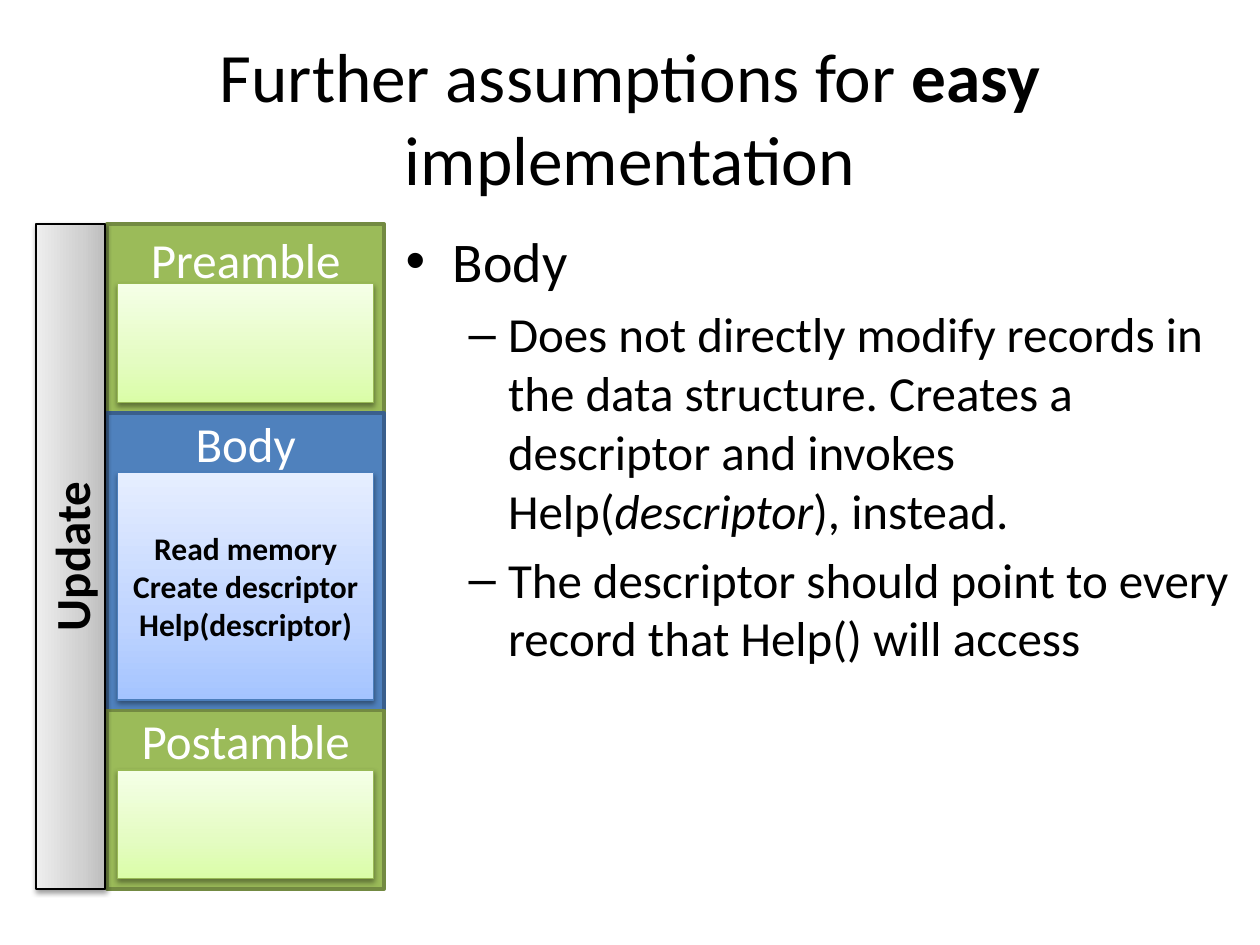
from copy import deepcopy

from lxml.etree import SubElement
from pptx import Presentation
from pptx.dml.color import RGBColor
from pptx.enum.shapes import MSO_SHAPE
from pptx.enum.text import MSO_ANCHOR, MSO_AUTO_SIZE, PP_ALIGN
from pptx.oxml.ns import qn
from pptx.util import Pt

FONT = "Calibri"
TITLE = [("Further assumptions for ", ""), ("easy", "b"), (" implementation", "")]
BULLETS = [
    (0, 32, [("Body", "")]),
    (1, 28, [("Does not directly modify records in the data structure. "
              "Creates a descriptor and invokes Help(", ""),
             ("descriptor", "i"), ("), instead.", "")]),
    (1, 28, [("The descriptor should point to every record that Help() will access", "")]),
]

GREEN = {"fill": "9BBB59", "edge": "738A42", "inner_edge": "98B955",
         "gradient": ("DAFDA7", "E4FCC2", "F5FFE7")}
BLUE = {"fill": "4F81BD", "edge": "3A5F8C", "inner_edge": "4B7EBC",
        "gradient": ("A4C4FF", "BFD4FF", "E6EEFF")}
GREY = ("BDBDBD", "D1D1D1", "EEEEEE")
STOPS = (0, 0.35, 1)

# heading, height, space above the heading, palette, steps inside
PHASES = [
    ("Preamble", 108, 3, GREEN, []),
    ("Body", 170, 0, BLUE, ["Read memory", "Create descriptor", "Help(descriptor)"]),
    ("Postamble", 102, 0, GREEN, []),
]
COLUMN_LEFT, COLUMN_TOP, COLUMN_WIDTH = 61.2, 128, 158.4
HEADING_HEIGHT, MARGIN = 34, 6
BAR_CENTER, BAR_THICKNESS = 40.3, 39.6


def color(hex_code):
    return RGBColor.from_string(hex_code)


def format_font(font, size, hex_code, bold=False, italic=False):
    font.name, font.size = FONT, Pt(size)
    font.bold, font.italic = bold, italic
    font.color.rgb = color(hex_code)


def add_runs(paragraph, pieces, size):
    for words, style in pieces:
        run = paragraph.add_run()
        run.text = words
        format_font(run.font, size, "000000", style == "b", style == "i")


def place(shape, left, top, width, height):
    shape.left, shape.top = Pt(left), Pt(top)
    shape.width, shape.height = Pt(width), Pt(height)


def add_box(shapes, left, top, width, height, edge, edge_width):
    box = shapes.add_shape(MSO_SHAPE.RECTANGLE, Pt(left), Pt(top), Pt(width), Pt(height))
    box.shadow.inherit = False
    box.line.color.rgb = color(edge)
    box.line.width = Pt(edge_width)
    return box


def write_lines(box, lines, size, hex_code, bold):
    frame = box.text_frame
    frame.word_wrap = True
    frame.vertical_anchor = MSO_ANCHOR.MIDDLE
    frame.text = "\n".join(lines)
    for paragraph in frame.paragraphs:
        paragraph.alignment = PP_ALIGN.CENTER
        for run in paragraph.runs:
            format_font(run.font, size, hex_code, bold)


def add_raised_box(shapes, left, top, width, height, edge, gradient):
    """Add a box with a three-stop gradient, darkest at the bottom, and a soft shadow."""
    box = add_box(shapes, left, top, width, height, edge, 0.75)
    box.fill.gradient()
    box.fill.gradient_angle = 90
    properties = box._element.spPr
    stop_list = properties.find(qn("a:gradFill")).find(qn("a:gsLst"))
    stop_list.append(deepcopy(stop_list[-1]))
    for stop, position, shade in zip(box.fill.gradient_stops, STOPS, gradient):
        stop.position = position
        stop.color.rgb = color(shade)
    shadow = SubElement(properties.find(qn("a:effectLst")), qn("a:outerShdw"),
                        blurRad=str(Pt(3.1)), dist=str(Pt(1.6)), dir="5400000",
                        rotWithShape="0")
    black = SubElement(shadow, qn("a:srgbClr"), val="000000")
    SubElement(black, qn("a:alpha"), val="38000")
    return box


def add_phase(shapes, top, heading, height, space_above, palette, steps):
    phase = add_box(shapes, COLUMN_LEFT, top, COLUMN_WIDTH, height, palette["edge"], 2)
    phase.fill.solid()
    phase.fill.fore_color.rgb = color(palette["fill"])
    write_lines(phase, [heading], 28, "FFFFFF", False)
    phase.text_frame.vertical_anchor = MSO_ANCHOR.TOP
    phase.text_frame.margin_top = Pt(space_above)
    panel = add_raised_box(shapes, COLUMN_LEFT + MARGIN, top + HEADING_HEIGHT,
                           COLUMN_WIDTH - 2 * MARGIN, height - HEADING_HEIGHT - MARGIN,
                           palette["inner_edge"], palette["gradient"])
    if steps:
        write_lines(panel, steps, 18, "000000", True)


def main():
    deck = Presentation()
    deck.slide_width, deck.slide_height = Pt(720), Pt(540)
    slide = deck.slides.add_slide(deck.slide_layouts[1])
    title, body = slide.placeholders

    place(title, 36, 21.6, 648, 90)
    title.text_frame.auto_size = MSO_AUTO_SIZE.NONE
    title.text_frame.vertical_anchor = MSO_ANCHOR.MIDDLE
    add_runs(title.text_frame.paragraphs[0], TITLE, 39.6)

    place(body, 224.6, 126, 486.7, 393)
    frame = body.text_frame
    frame.auto_size = MSO_AUTO_SIZE.NONE
    for index, (level, size, pieces) in enumerate(BULLETS):
        paragraph = frame.add_paragraph() if index else frame.paragraphs[0]
        paragraph.level = level
        add_runs(paragraph, pieces, size)

    top = COLUMN_TOP
    for heading, height, space_above, palette, steps in PHASES:
        add_phase(slide.shapes, top, heading, height, space_above, palette, steps)
        top += height

    length = top - COLUMN_TOP
    middle = COLUMN_TOP + length / 2
    update = add_raised_box(slide.shapes, BAR_CENTER - length / 2,
                            middle - BAR_THICKNESS / 2, length, BAR_THICKNESS,
                            "000000", GREY)
    update.rotation = 270
    write_lines(update, ["Update"], 28, "000000", True)

    deck.save("out.pptx")


if __name__ == "__main__":
    main()
